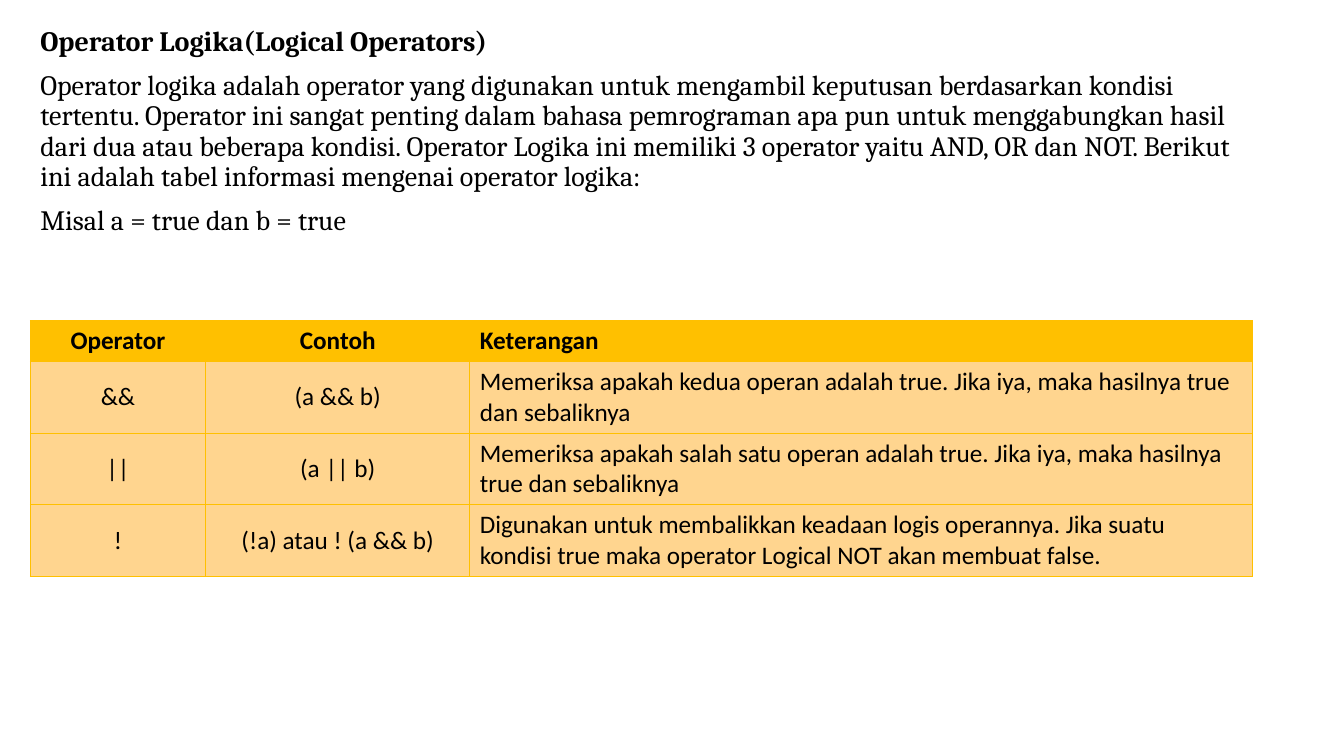
from dataclasses import dataclass

from lxml import etree
from pptx import Presentation
from pptx.dml.color import RGBColor
from pptx.enum.text import MSO_ANCHOR, MSO_AUTO_SIZE, PP_ALIGN
from pptx.oxml.ns import qn
from pptx.util import Inches, Pt

LEFT, CENTER = PP_ALIGN.LEFT, PP_ALIGN.CENTER
TOP, MIDDLE = MSO_ANCHOR.TOP, MSO_ANCHOR.MIDDLE
NO_AUTOFIT = MSO_AUTO_SIZE.NONE
TITLE_AND_CONTENT = 1


@dataclass(frozen=True)
class Theme:
    ink: str = "000000"
    header: str = "FFC000"
    row: str = "FFD58F"
    border: str = "FFC000"
    border_width: float = 0.5
    body_font: str = "Cambria"
    table_font: str = "Calibri"
    body_size: int = 20
    table_size: int = 18


THEME = Theme()
SLIDE_WIDTH, SLIDE_HEIGHT = Inches(13.33), Inches(7.5)
MARGIN = Inches(0.3)

HEADING = "Operator Logika(Logical Operators)"
PARAGRAPHS = [
    "Operator logika adalah operator yang digunakan untuk mengambil keputusan "
    "berdasarkan kondisi tertentu. Operator ini sangat penting dalam bahasa "
    "pemrograman apa pun untuk menggabungkan hasil dari dua atau beberapa kondisi. "
    "Operator Logika ini memiliki 3 operator yaitu AND, OR dan NOT. Berikut ini "
    "adalah tabel informasi mengenai operator logika:",
    "Misal a = true dan b = true",
]
OPERATORS = [
    ("Operator", "Contoh", "Keterangan"),
    ("&&", "(a && b)",
     "Memeriksa apakah kedua operan adalah true. Jika iya, maka hasilnya true "
     "dan sebaliknya"),
    ("||", "(a || b)",
     "Memeriksa apakah salah satu operan adalah true. Jika iya, maka hasilnya "
     "true dan sebaliknya"),
    ("!", "(!a) atau ! (a && b)",
     "Digunakan untuk membalikkan keadaan logis operannya. Jika suatu kondisi "
     "true maka operator Logical NOT akan membuat false."),
]
COLUMN_WIDTHS = (1.74, 2.62, 7.76)
COLUMN_ALIGNMENTS = (CENTER, CENTER, LEFT)
HEADER_HEIGHT, ROW_HEIGHT = 0.4, 0.71


def write(para, text, *, font, size, bold=False, align=LEFT, spacing=1.0, before=0):
    span = para.add_run()
    span.text = text
    span.font.name = font
    span.font.size = Pt(size)
    span.font.bold = bold
    span.font.color.rgb = RGBColor.from_string(THEME.ink)
    para.alignment = align
    para.line_spacing = spacing
    para.space_before = Pt(before)


def remove_bullet(para):
    properties = para._p.get_or_add_pPr()
    properties.set("marL", "0")
    properties.set("indent", "0")
    etree.SubElement(properties, qn("a:buNone"))


def add_introduction(page):
    title, body = page.placeholders
    title.element.getparent().remove(title.element)
    body.left, body.top = MARGIN, Inches(0.22)
    body.width, body.height = Inches(12.24), Inches(2.27)
    frame = body.text_frame
    frame.auto_size = NO_AUTOFIT
    frame.vertical_anchor = TOP
    for index, text in enumerate([HEADING, *PARAGRAPHS]):
        para = frame.add_paragraph() if index else frame.paragraphs[0]
        remove_bullet(para)
        write(para, text, font=THEME.body_font, size=THEME.body_size,
              bold=index == 0, spacing=0.9, before=10 if index else 0)


def set_borders(cell):
    properties = cell._tc.get_or_add_tcPr()
    for position, side in enumerate(("lnL", "lnR", "lnT", "lnB")):
        line = etree.Element(qn(f"a:{side}"), w=str(Pt(THEME.border_width)))
        fill = etree.SubElement(line, qn("a:solidFill"))
        etree.SubElement(fill, qn("a:srgbClr"), val=THEME.border)
        properties.insert(position, line)


def add_operator_table(page):
    heights = [HEADER_HEIGHT] + [ROW_HEIGHT] * (len(OPERATORS) - 1)
    table = page.shapes.add_table(
        len(OPERATORS), len(COLUMN_WIDTHS), MARGIN, Inches(3.18),
        Inches(sum(COLUMN_WIDTHS)), Inches(sum(heights))).table
    for column, width in zip(table.columns, COLUMN_WIDTHS):
        column.width = Inches(width)
    for row_index, (texts, height) in enumerate(zip(OPERATORS, heights)):
        table.rows[row_index].height = Inches(height)
        is_header = row_index == 0
        for column_index, text in enumerate(texts):
            cell = table.cell(row_index, column_index)
            cell.vertical_anchor = MIDDLE
            cell.fill.solid()
            cell.fill.fore_color.rgb = RGBColor.from_string(
                THEME.header if is_header else THEME.row)
            set_borders(cell)
            write(cell.text_frame.paragraphs[0], text, font=THEME.table_font,
                  size=THEME.table_size, bold=is_header,
                  align=COLUMN_ALIGNMENTS[column_index])


def main():
    deck = Presentation()
    deck.slide_width, deck.slide_height = SLIDE_WIDTH, SLIDE_HEIGHT
    page = deck.slides.add_slide(deck.slide_layouts[TITLE_AND_CONTENT])
    add_introduction(page)
    add_operator_table(page)
    deck.save("out.pptx")


if __name__ == "__main__":
    main()
